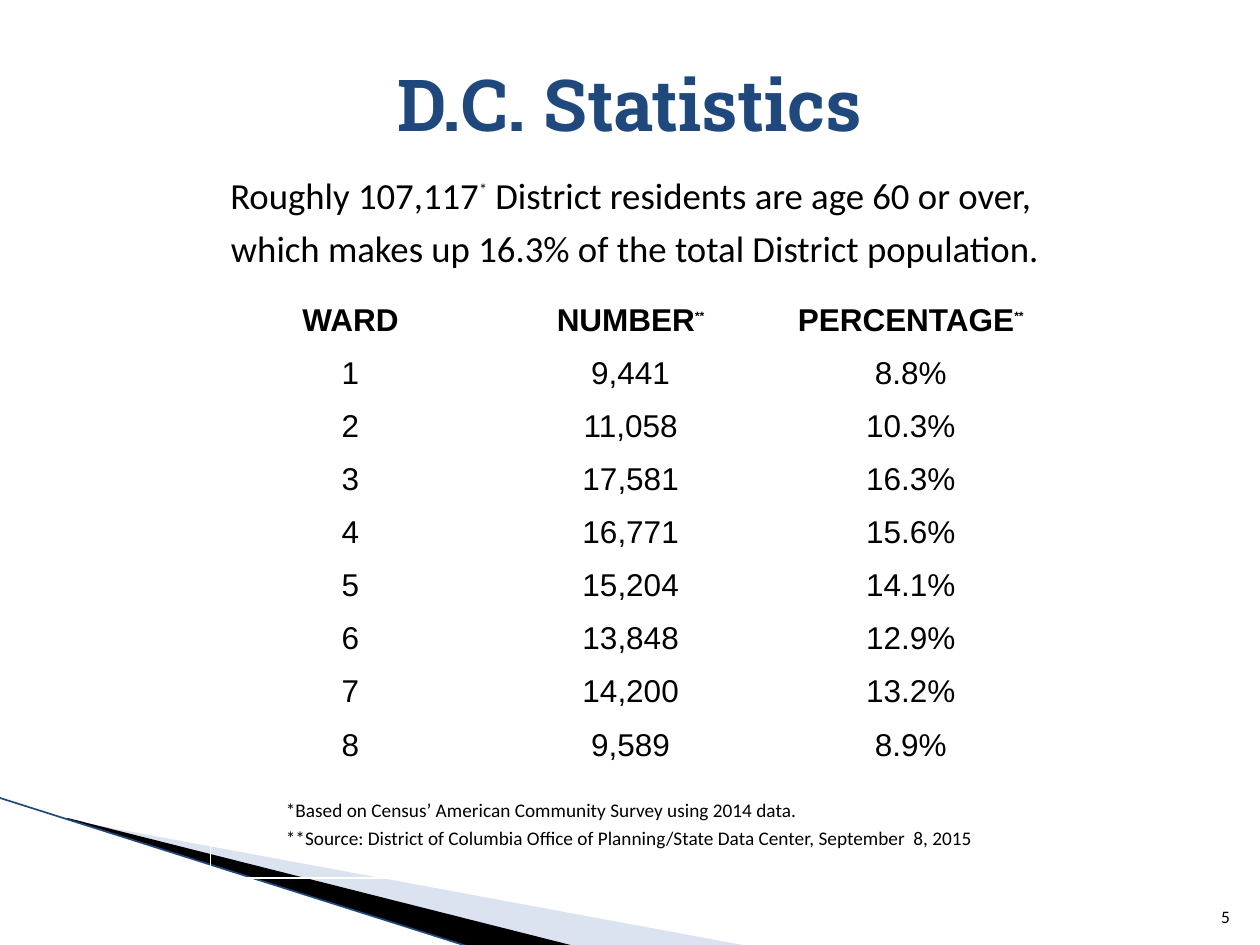
from dataclasses import dataclass

from lxml import etree
from pptx import Presentation
from pptx import util as u
from pptx.dml.color import RGBColor
from pptx.enum import shapes, text
from pptx.oxml import ns


@dataclass(frozen=True)
class Theme:
    heading_font: str = "Roboto Slab"
    body_font: str = "Calibri"
    table_font: str = "Arial"
    ink: str = "000000"
    heading: str = "1F497D"
    pale_wedge: str = "A7B9DB"
    title_size: int = 41
    body_size: int = 21
    body_mark_size: int = 16
    table_size: int = 18
    table_mark_size: int = 12
    note_size: int = 11
    number_size: int = 10


THEME = Theme()
ALIGN = text.PP_ALIGN
ANCHOR = text.MSO_ANCHOR

HEADERS = [("WARD", ""), ("NUMBER", "**"), ("PERCENTAGE", "**")]
WARDS = [
    ("1", "9,441", "8.8%"),
    ("2", "11,058", "10.3%"),
    ("3", "17,581", "16.3%"),
    ("4", "16,771", "15.6%"),
    ("5", "15,204", "14.1%"),
    ("6", "13,848", "12.9%"),
    ("7", "14,200", "13.2%"),
    ("8", "9,589", "8.9%"),
]


def place(part, box):
    for side, length in zip(("left", "top", "width", "height"), box):
        setattr(part, side, u.Inches(length))


def add_run(paragraph, words, font, size, color=THEME.ink, bold=False, raised=False):
    run = paragraph.add_run()
    run.text = words
    for key, value in {"name": font, "size": u.Pt(size), "bold": bold}.items():
        setattr(run.font, key, value)
    run.font.color.rgb = RGBColor.from_string(color)
    if raised:
        run.font._element.set("baseline", "50000")


def format_frame(frame, anchor=ANCHOR.TOP):
    settings = {"word_wrap": True, "auto_size": text.MSO_AUTO_SIZE.NONE,
                "vertical_anchor": anchor}
    for key, value in settings.items():
        setattr(frame, key, value)


def write_lines(frame, lines, align, spacing=1.0):
    """Write one paragraph for each line; a line is a list of add_run arguments."""
    for index, line in enumerate(lines):
        paragraph = frame.add_paragraph() if index else frame.paragraphs[0]
        properties = paragraph._p.get_or_add_pPr()
        properties.set("marL", "0")
        properties.set("indent", "0")
        etree.SubElement(properties, ns.qn("a:buNone"))
        settings = {"alignment": align, "line_spacing": spacing,
                    "space_before": u.Pt(0), "space_after": u.Pt(0)}
        for key, value in settings.items():
            setattr(paragraph, key, value)
        for run in line:
            add_run(paragraph, *run)


def add_wedge(slide, points, color, opacity=None):
    corners = [(u.Inches(x), u.Inches(y)) for x, y in points]
    builder = slide.shapes.build_freeform(*corners[0])
    builder.add_line_segments(corners[1:])
    wedge = builder.convert_to_shape()
    wedge.shadow.inherit = False
    wedge.fill.solid()
    wedge.fill.fore_color.rgb = RGBColor.from_string(color)
    wedge.line.fill.background()
    if opacity:
        tint = wedge._element.spPr.find(".//" + ns.qn("a:srgbClr"))
        etree.SubElement(tint, ns.qn("a:alpha")).set("val", str(opacity * 1000))


def add_corner(slide, box):
    """Draw the swoosh of two wedges and an edge line in the lower left corner."""
    left, top, width, height = box
    bottom = top + height

    add_wedge(slide, [(left + 0.56, top + 0.18), (left + width, bottom),
                      (left + 4.57, bottom), (left + 0.56, top + 0.17)],
              THEME.pale_wedge, opacity=40)
    add_wedge(slide, [(left + 0.54, top + 0.16), (left + 4.58, bottom),
                      (left + 3.73, bottom), (left + 0.55, top + 0.17)],
              THEME.ink)
    edge = slide.shapes.add_connector(
        shapes.MSO_CONNECTOR.STRAIGHT, u.Inches(left), u.Inches(top),
        u.Inches(left + 3.72), u.Inches(bottom))
    edge.line.color.rgb = RGBColor.from_string(THEME.heading)
    edge.line.width = u.Pt(0.95)
    etree.SubElement(edge._element.spPr, ns.qn("a:effectLst"))


def fill_title(slide, box):
    title = slide.shapes.title
    place(title, box)
    format_frame(title.text_frame, ANCHOR.MIDDLE)
    write_lines(title.text_frame, [[("D.C. Statistics", THEME.heading_font,
                                     THEME.title_size, THEME.heading, True)]],
                ALIGN.CENTER)


def fill_summary(slide, box):
    summary = slide.placeholders[1]
    place(summary, box)
    format_frame(summary.text_frame)
    style = (THEME.body_font, THEME.body_size)
    mark = ("*", THEME.body_font, THEME.body_mark_size, THEME.ink, False, True)
    write_lines(summary.text_frame, [
        [("Roughly 107,117", *style), mark,
         (" District residents are age 60 or over, ", *style)],
        [("which makes up 16.3% of the total District population.", *style)],
    ], ALIGN.CENTER, 1.2)


def add_ward_table(slide, box):
    spare_rows = 2
    row_count = 1 + len(WARDS) + spare_rows
    frame = slide.shapes.add_table(row_count, len(HEADERS), *map(u.Inches, box))
    table = frame.table
    table.first_row = table.horz_banding = False
    for row in table.rows:
        row.height = u.Inches(box[3] / row_count)
    for cell in table.iter_cells():
        cell.fill.background()
        cell.vertical_anchor = ANCHOR.MIDDLE

    rows = [HEADERS] + [[(value, "") for value in ward] for ward in WARDS]
    for r, row in enumerate(rows):
        for c, (value, mark) in enumerate(row):
            paragraph = table.cell(r, c).text_frame.paragraphs[0]
            paragraph.alignment = ALIGN.CENTER
            bold = r == 0
            add_run(paragraph, value, THEME.table_font, THEME.table_size, bold=bold)
            if mark:
                add_run(paragraph, mark, THEME.table_font, THEME.table_mark_size,
                        bold=bold, raised=True)
    last = row_count - 1
    table.cell(last, 0).merge(table.cell(last, len(HEADERS) - 1))


def add_text(slide, box, lines, size, align=ALIGN.LEFT, anchor=ANCHOR.TOP, spacing=1.0):
    frame = slide.shapes.add_textbox(*map(u.Inches, box)).text_frame
    format_frame(frame, anchor)
    write_lines(frame, [[(line, THEME.body_font, size)] for line in lines],
                align, spacing)


def main():
    deck = Presentation()
    deck.slide_width, deck.slide_height = u.Inches(10), u.Inches(7.5)
    slide = deck.slides.add_slide(deck.slide_layouts[1])

    add_corner(slide, (-0.01, 6.33, 5.96, 1.18))
    fill_title(slide, (0.5, 0.3, 9, 1.03))
    fill_summary(slide, (0.5, 1.25, 9.08, 0.83))
    add_ward_table(slide, (1.67, 2.33, 6.67, 4.64))
    add_text(slide, (2.17, 6.25, 5.92, 0.83), [
        "*Based on Census’ American Community Survey using 2014 data.",
        "**Source: District of Columbia Office of Planning/State Data Center, "
        "September  8, 2015",
    ], THEME.note_size, spacing=1.2)
    add_text(slide, (9.46, 7.01, 0.4, 0.4), ["5"], THEME.number_size,
             ALIGN.RIGHT, ANCHOR.BOTTOM)

    deck.save("out.pptx")


if __name__ == "__main__":
    main()
